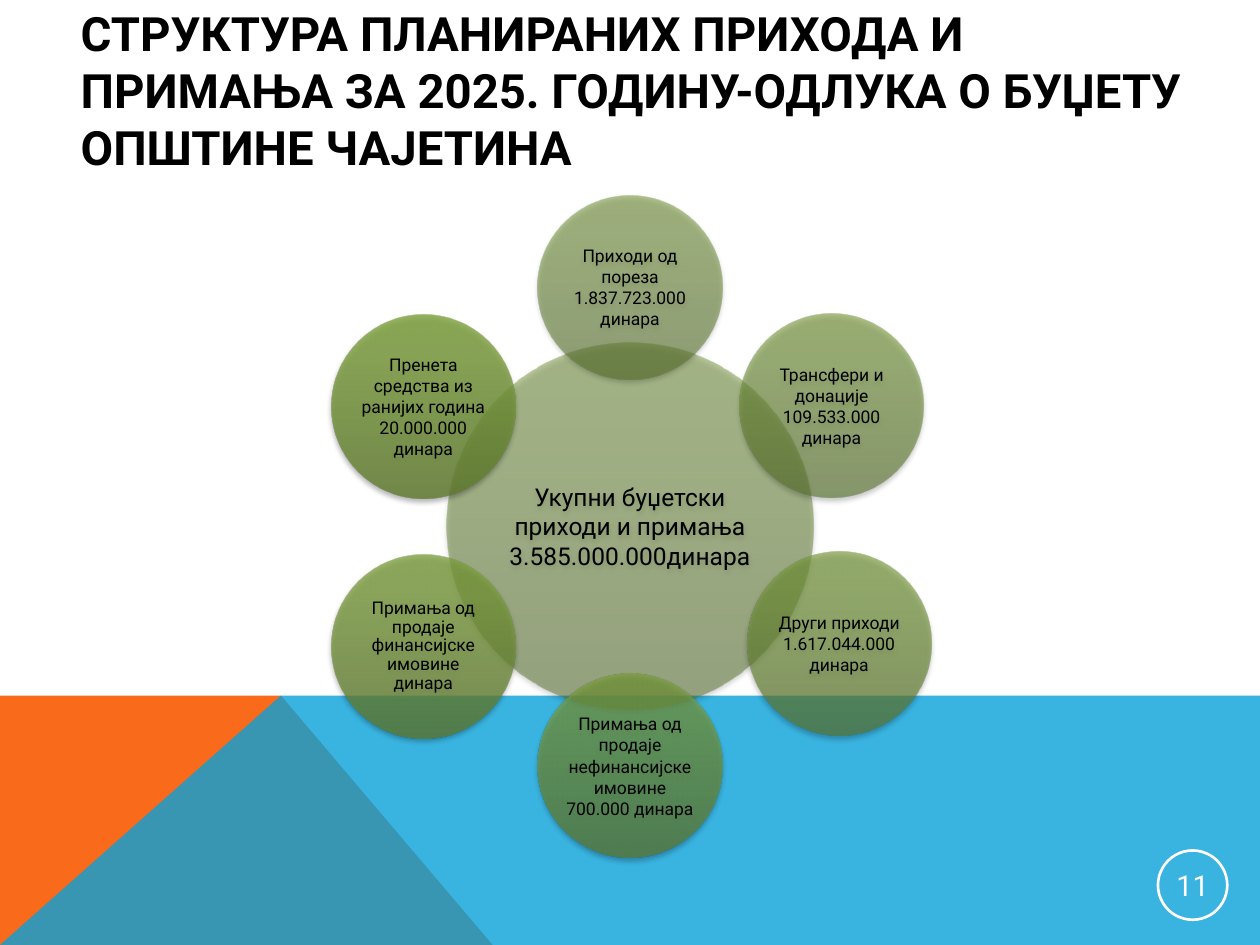
from lxml import etree
from pptx import Presentation
from pptx.dml.color import RGBColor
from pptx.enum.shapes import MSO_SHAPE
from pptx.enum.text import MSO_ANCHOR, MSO_AUTO_SIZE, PP_ALIGN
from pptx.oxml.ns import qn
from pptx.util import Inches, Pt

ELLIPSE = MSO_SHAPE.OVAL
MIDDLE = MSO_ANCHOR.MIDDLE
LEFT, CENTER = PP_ALIGN.LEFT, PP_ALIGN.CENTER
NO_AUTOFIT = MSO_AUTO_SIZE.NONE

COLUMNS, ROWS = 100, 75
TITLE_ONLY = 5
CENTRAL_SIZE, SATELLITE_SIZE = 29.1, 14.6

GRADIENT_STOPS = [(0, "566F2A", "607B2F"), (80, "709037", "7C9F3D"), (100, "719235", "7DA23C")]

CIRCLES = [
    (50, 41.75, CENTRAL_SIZE, 14, 1, "Укупни буџетски приходи и примања 3.585.000.000динара"),
    (50, 22.8, SATELLITE_SIZE, 10, 1, "Приходи од пореза 1.837.723.000 динара"),
    (66, 32.2, SATELLITE_SIZE, 10, 1, "Трансфери и донације 109.533.000 динара"),
    (66.6, 51.1, SATELLITE_SIZE, 10, 1, "Други приходи 1.617.044.000 динара"),
    (50, 60.8, SATELLITE_SIZE, 10, 1, "Примања од продаје нефинансијске имовине 700.000 динара"),
    (33.6, 51.3, SATELLITE_SIZE, 10, 0.9, "Примања од продаје финансијске имовине динара"),
    (33.6, 32.3, SATELLITE_SIZE, 10, 1, "Пренета средства из ранијих година 20.000.000 динара"),
]


def color(hex_text):
    return RGBColor.from_string(hex_text)


def blend(first, last, share):
    pairs = zip(color(first), color(last))
    return str(RGBColor(*(round(a + (b - a) * share) for a, b in pairs)))


def add_color(parent, hex_text, opacity):
    element = etree.SubElement(parent, qn("a:srgbClr"), val=hex_text)
    etree.SubElement(element, qn("a:alpha"), val=str(opacity * 1000))


class SlideBuilder:
    font = "Roboto"
    ink = "000000"
    paper = "FFFFFF"

    def __init__(self, presentation):
        self.slide = presentation.slides.add_slide(presentation.slide_layouts[TITLE_ONLY])
        self.column = presentation.slide_width / COLUMNS
        self.row = presentation.slide_height / ROWS

    def place(self, left, top, width, height):
        return (round(left * self.column), round(top * self.row),
                round(width * self.column), round(height * self.row))

    def label(self, shape, text, size, hex_text, align=CENTER, bold=False, inset=0.01, spacing=1):
        frame = shape.text_frame
        frame.word_wrap = True
        frame.auto_size = NO_AUTOFIT
        frame.vertical_anchor = MIDDLE
        frame.margin_left = frame.margin_right = Inches(inset)
        frame.margin_top = frame.margin_bottom = Inches(inset)
        paragraph = frame.paragraphs[0]
        paragraph.alignment = align
        paragraph.line_spacing = spacing
        run = paragraph.add_run()
        run.text = text
        run.font.name = self.font
        run.font.size = Pt(size)
        run.font.bold = bold
        run.font.color.rgb = color(hex_text)

    def title(self, text, area):
        shape = self.slide.shapes.title
        shape.left, shape.top, shape.width, shape.height = self.place(*area)
        self.label(shape, text, 27, self.ink, LEFT, True, 0.1)

    def polygon(self, points, hex_text, opacity=100):
        corners = [(round(x * self.column), round(y * self.row)) for x, y in points]
        builder = self.slide.shapes.build_freeform(*corners[0])
        builder.add_line_segments(corners[1:], close=True)
        shape = builder.convert_to_shape()
        shape.shadow.inherit = False
        shape.line.fill.background()
        shape.fill.solid()
        shape.fill.fore_color.rgb = color(hex_text)
        fill = shape._element.spPr.find(qn("a:solidFill"))
        fill.clear()
        add_color(fill, hex_text, opacity)

    def ellipse(self, center_x, center_y, size):
        area = self.place(center_x - size / 2, center_y - size / 2, size, size)
        shape = self.slide.shapes.add_shape(ELLIPSE, *area)
        shape.shadow.inherit = False
        shape.fill.background()
        return shape

    def page_number(self, text, center_x, center_y, size):
        shape = self.ellipse(center_x, center_y, size)
        shape.line.color.rgb = color(self.paper)
        shape.line.width = Pt(1.5)
        self.label(shape, text, 16.5, self.paper)

    def income_circle(self, index, center_x, center_y, size, font_size, spacing, text):
        shape = self.ellipse(center_x, center_y, size)
        shape.line.fill.background()
        properties = shape._element.spPr
        gradient = etree.Element(qn("a:gradFill"), rotWithShape="1")
        stops = etree.SubElement(gradient, qn("a:gsLst"))
        share = index / (len(CIRCLES) - 1)
        for position, first, last in GRADIENT_STOPS:
            stop = etree.SubElement(stops, qn("a:gs"), pos=str(position * 1000))
            add_color(stop, blend(first, last, share), 50 + 5 * index)
        etree.SubElement(gradient, qn("a:lin"), ang="16200000", scaled="0")
        properties.replace(properties.find(qn("a:noFill")), gradient)
        shadow = etree.SubElement(
            properties.find(qn("a:effectLst")), qn("a:outerShdw"), blurRad=str(Pt(3.1)),
            dist=str(Pt(1.8)), dir="5400000", rotWithShape="0")
        add_color(shadow, self.ink, 35)
        self.label(shape, text, font_size, self.ink, spacing=spacing)


def main():
    presentation = Presentation()
    presentation.slide_width = Inches(10)
    presentation.slide_height = Inches(7.5)
    builder = SlideBuilder(presentation)
    horizon, peak = 55.2, 22.3
    builder.polygon([(0, ROWS), (0, horizon), (peak, horizon), (39.1, ROWS)], "F96A1B")
    builder.polygon([(0, ROWS), (peak, horizon), (COLUMNS, horizon), (COLUMNS, ROWS)], "08A1D9", 80)
    builder.title("СТРУКТУРА ПЛАНИРАНИХ ПРИХОДА И ПРИМАЊА ЗА 2025. ГОДИНУ-ОДЛУКА О БУЏЕТУ "
                  "ОПШТИНЕ ЧАЈЕТИНА", (5.4, 2.9, 92.7, 8.4))
    builder.page_number("11", 94.65, 70.25, 5.5)
    for index, circle in enumerate(CIRCLES):
        builder.income_circle(index, *circle)
    presentation.save("out.pptx")


if __name__ == "__main__":
    main()
